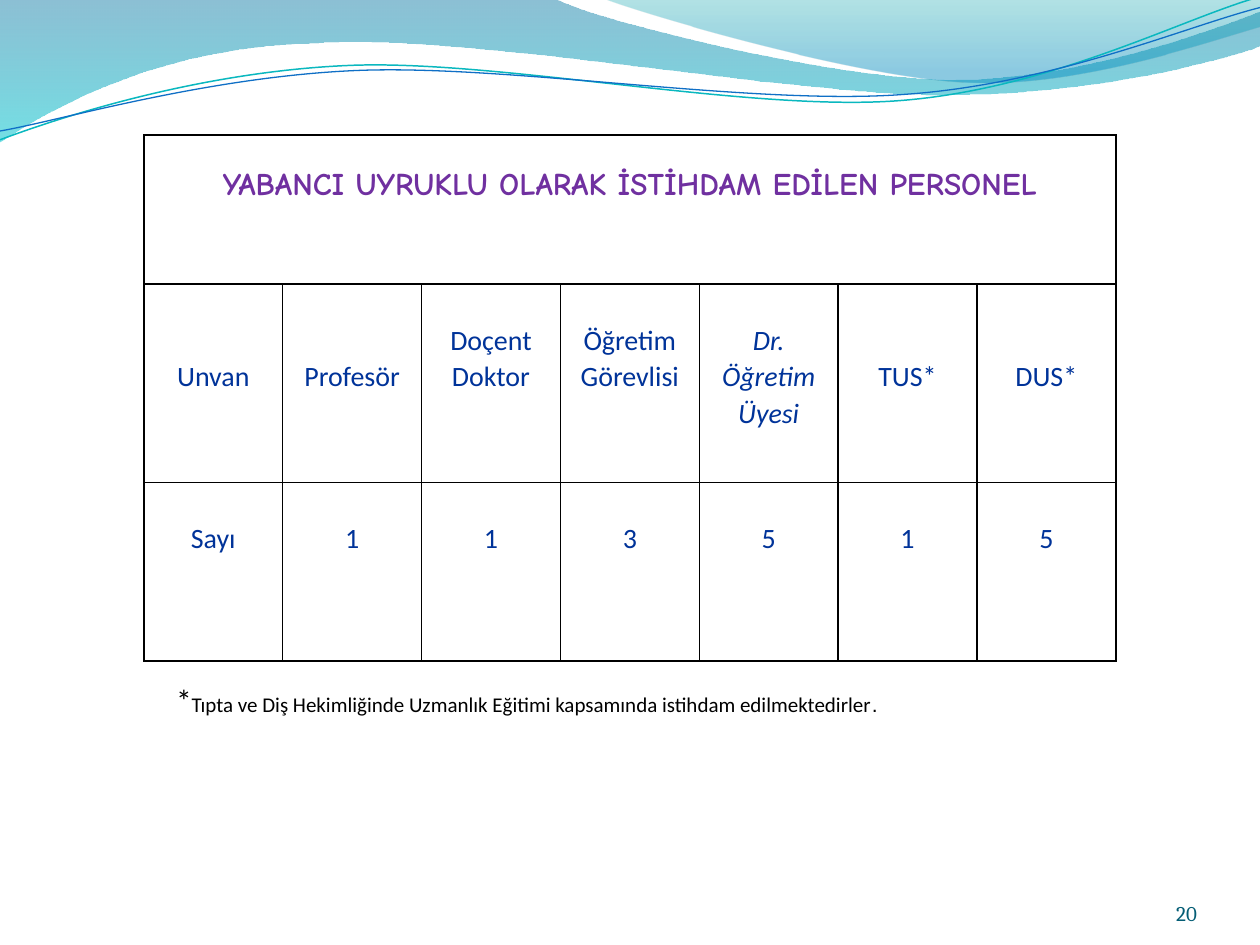
from pptx import Presentation
from pptx import util as u
from pptx.dml.color import RGBColor
from pptx.enum import text
from pptx.oxml import parse_xml
from pptx.oxml.ns import nsdecls, qn
from lxml import etree

BLACK = RGBColor(0, 0, 0)
NAVY = RGBColor(0x00, 0x33, 0x99)
PURPLE = RGBColor(0x70, 0x30, 0xA0)
TEAL = RGBColor(0x04, 0x5D, 0x75)
AQUA = RGBColor(0x0A, 0xB8, 0xBF)
BLUE = RGBColor(0x0F, 0x6F, 0xC6)
DEEP = RGBColor(0x00, 0x74, 0xA1)
CYAN = RGBColor(0x00, 0xC6, 0xCF)
MINT = RGBColor(0x00, 0xA1, 0xA9)
SKY = RGBColor(0x00, 0x8B, 0xBF)

prs = Presentation()
prs.slide_width, prs.slide_height = u.Cm(25.4), u.Cm(19.05)
slide = prs.slides.add_slide(prs.slide_layouts[6])


def style(run, name, size, color, bold=False):
    run.font.name, run.font.size = name, u.Pt(size)
    run.font.color.rgb, run.font.bold = color, bold


def wave(path, close):
    """Draw straight (2 numbers) and Bezier (6 numbers) steps, in inches."""
    dots = [(step[k] * 1000, step[k + 1] * 1000)
            for step in path for k in range(0, len(step), 2)]
    pen = slide.shapes.build_freeform(*dots[0], scale=u.Cm(2.54) / 1000)
    pen.add_line_segments(dots[1:], close=close)
    shape = pen.convert_to_shape()
    shape.shadow.inherit = False
    # Join each three points of a Bezier step into one curve
    legs = iter(list(shape.element.spPr.iter(qn("a:lnTo"))))
    for step in path[1:]:
        leg = next(legs)
        if len(step) == 6:
            leg.tag = qn("a:cubicBezTo")
            for _ in range(2):
                spare = next(legs)
                leg.append(spare[0])
                spare.getparent().remove(spare)
    return shape


# Filled waves: outline, then colour, position and opacity of each stop
fills = [
    ([(0, 0), (4.4, -0.01), (4.76, 0.17, 6.64, 0.63, 7.58, 0.63),
      (8.53, 0.63, 9.58, 0.26, 10, 0.09), (10.01, 0.36),
      (9.83, 0.44, 8.7, 0.76, 7.46, 0.75), (6.22, 0.75, 3.82, 0.28, 2.57, 0.34),
      (1.29, 0.36, 0.46, 0.83, -0.01, 1.13)],
     [(DEEP, 0, 45), (CYAN, 1, 55)]),
    ([(4.79, -0.01), (5.09, 0.11, 6.82, 0.62, 7.69, 0.65),
      (8.56, 0.69, 9.61, 0.32, 10, 0.21), (10, 0)],
     [(MINT, 0, 30), (SKY, 0.8, 45)]),
]
for path, stops in fills:
    shape = wave(path, True)
    shape.line.fill.background()
    shape.fill.gradient()
    shape.fill.gradient_angle = 270
    for stop, (color, pos, alpha) in zip(shape.fill.gradient_stops, stops):
        stop.color.rgb, stop.position = color, pos
    marks = shape.element.spPr.iter(qn("a:srgbClr"))
    for mark, (color, pos, alpha) in zip(marks, stops):
        etree.SubElement(mark, qn("a:alpha")).set("val", str(alpha * 1000))

# Thin wave lines
lines = [
    ([(0, 1.11), (0.48, 0.93, 1.58, 0.57, 2.77, 0.52),
      (3.95, 0.47, 5.93, 0.89, 7.13, 0.8), (8.33, 0.71, 9.38, 0.15, 9.98, -0.02)],
     AQUA, 0.85),
    ([(0, 1.04), (0.47, 0.96, 1.64, 0.61, 2.83, 0.56),
      (4.03, 0.51, 5.97, 0.84, 7.17, 0.75), (8.36, 0.67, 9.41, 0.21, 10, 0.06)],
     BLUE, 0.75),
]
for path, color, width in lines:
    shape = wave(path, False)
    shape.fill.background()
    shape.line.color.rgb, shape.line.width = color, u.Pt(width)

# Staff table: each cell holds its text and the lines of space above it
rows = [
    [("YABANCI UYRUKLU OLARAK İSTİHDAM EDİLEN PERSONEL", 0.8)],
    [("Unvan", 2), ("Profesör", 2), ("Doçent\nDoktor", 1), ("Öğretim\nGörevlisi", 1),
     ("Dr. Öğretim\nÜyesi", 1), ("TUS*", 2), ("DUS*", 2)],
    [(word, 1) for word in ("Sayı", "1", "1", "3", "5", "1", "5")],
]
frame = slide.shapes.add_table(3, 7, u.Cm(2.9), u.Cm(2.72), u.Cm(19.6), u.Cm(10.6))
table = frame.table
table.first_row = table.horz_banding = False
for col in table.columns:
    col.width = u.Cm(2.8)
for row, high in zip(table.rows, (3.01, 4, 3.59)):
    row.height = u.Cm(high)
table.cell(0, 0).merge(table.cell(0, 6))

for r, row in enumerate(rows):
    for c, (words, gap) in enumerate(row):
        cell = table.cell(r, c)
        cell.margin_left = cell.margin_right = u.Cm(0.18)
        cell.margin_top, cell.margin_bottom = u.Cm(0.74 * gap), 0
        cell.text_frame.text = words
        for para in cell.text_frame.paragraphs:
            para.alignment = text.PP_ALIGN.CENTER
            para.line_spacing = 1.07
            for run in para.runs:
                if r == 0:
                    style(run, "Comic Neue", 18, PURPLE, True)
                else:
                    style(run, "Calibri", 16, NAVY)
                    run.font.italic = (r, c) == (1, 4)

# Cell borders
for cell in table.iter_cells():
    props = cell._tc.get_or_add_tcPr()
    for side in ("lnL", "lnR", "lnT", "lnB"):
        props.append(parse_xml(
            f'<a:{side} {nsdecls("a")} w="12700"><a:solidFill>'
            f'<a:srgbClr val="{BLACK}"/></a:solidFill></a:{side}>'))
    cell.fill.background()

# Footnote
note = slide.shapes.add_textbox(u.Cm(3.3), u.Cm(13.61), u.Cm(19.6), u.Cm(1.02))
note.text_frame.word_wrap = True
para = note.text_frame.paragraphs[0]
for words, name, size in (
        ("*", "Calibri", 18),
        ("Tıpta ve Diş Hekimliğinde Uzmanlık Eğitimi kapsamında istihdam edilmektedirler",
         "Calibri", 12),
        (".", "Arial", 12)):
    run = para.add_run()
    run.text = words
    style(run, name, size, BLACK)

# Page number
page = slide.shapes.add_textbox(u.Cm(22.02), u.Cm(17.65), u.Cm(2.11), u.Cm(1.02))
body = page.text_frame
body.word_wrap = True
body.margin_left = body.margin_right = body.margin_top = body.margin_bottom = 0
body.vertical_anchor = text.MSO_ANCHOR.BOTTOM
body.text = "20"
body.paragraphs[0].alignment = text.PP_ALIGN.RIGHT
style(body.paragraphs[0].runs[0], "Cambria", 12, TEAL)

prs.save("out.pptx")
